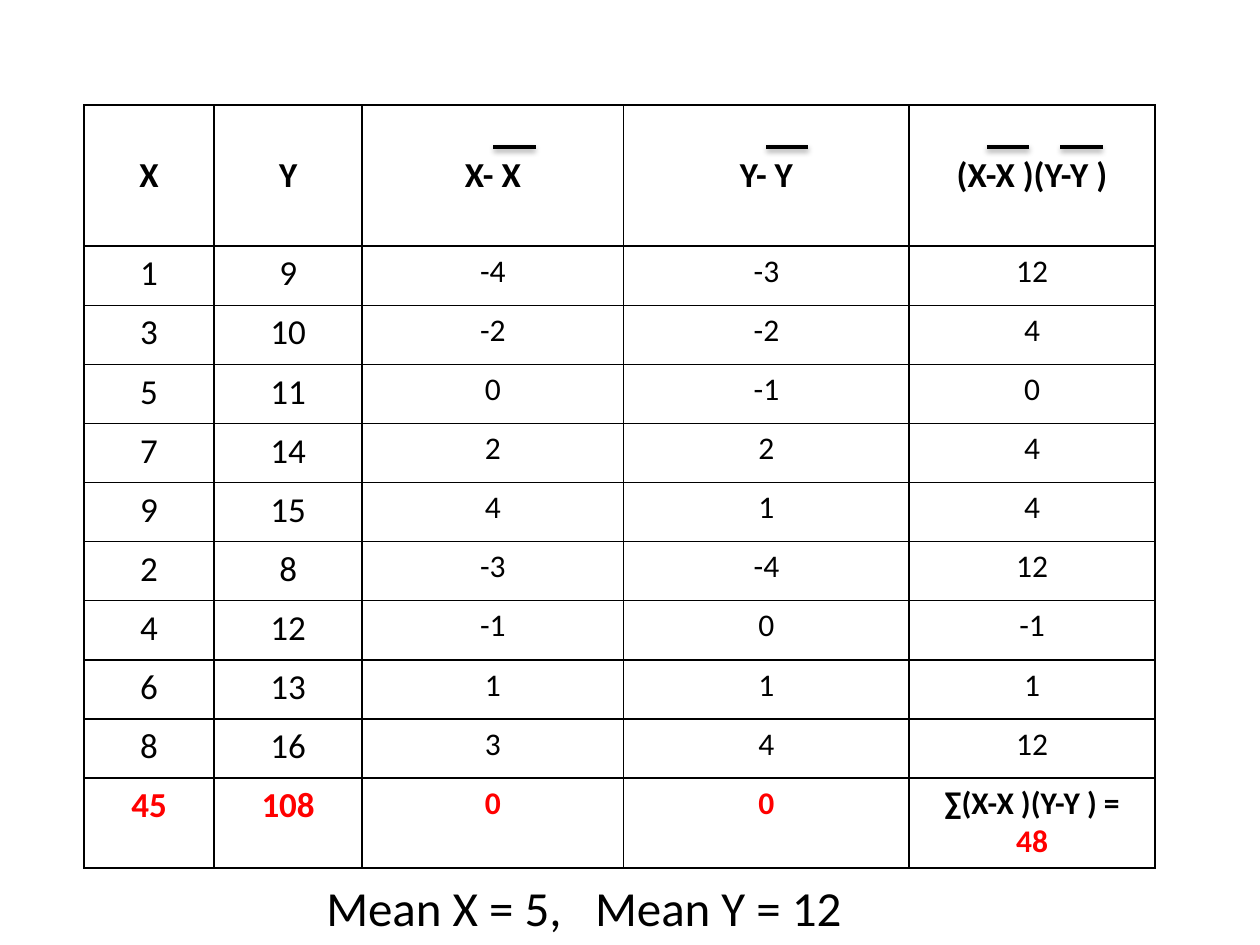
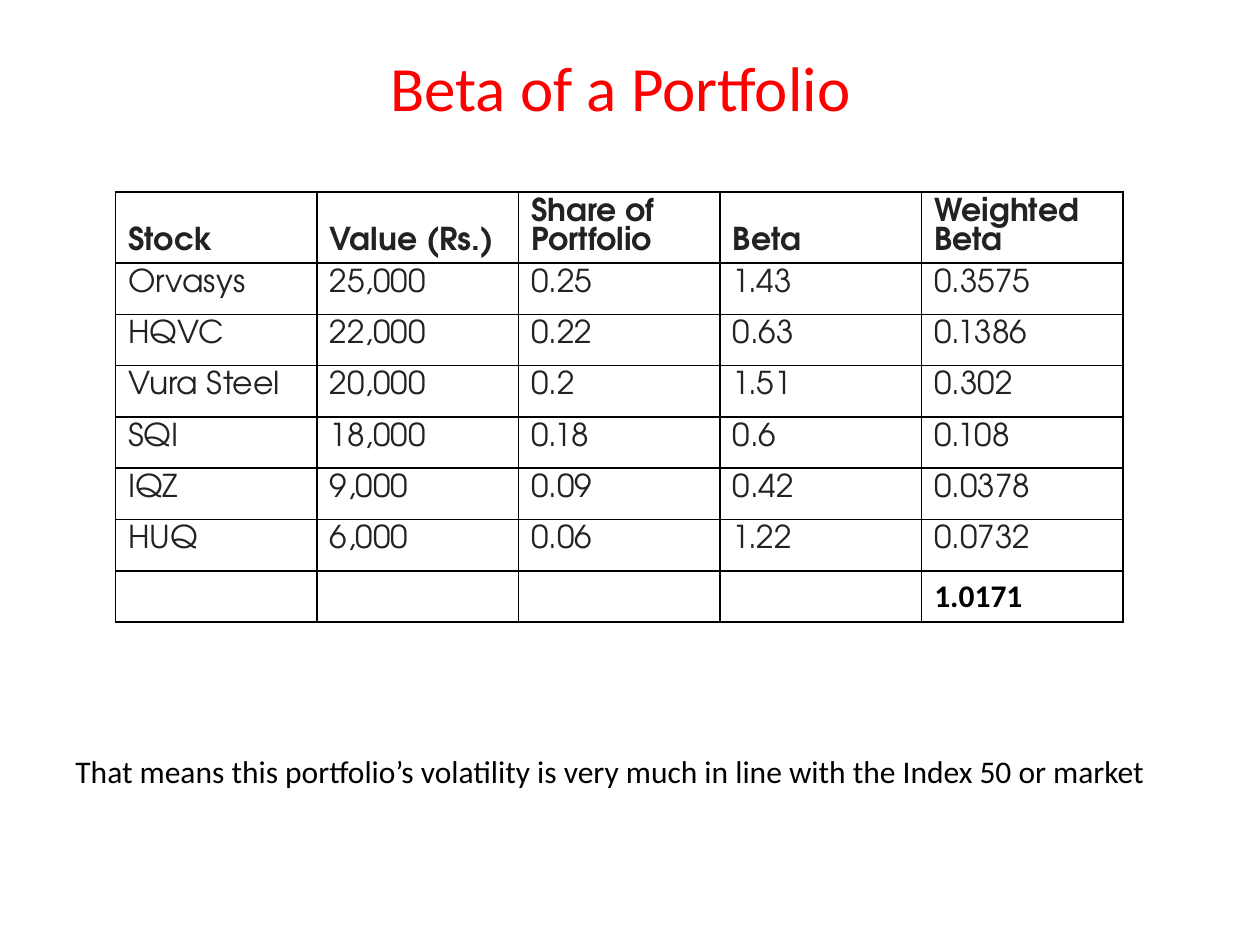
from dataclasses import dataclass

from lxml import etree
from pptx import Presentation, util as u
from pptx.dml.color import RGBColor
from pptx.enum import shapes, text
from pptx.oxml import parse_xml
from pptx.oxml.ns import nsdecls, qn


# Colours, fonts and type sizes
@dataclass(frozen=True)
class Theme:
    ink: str = "000000"
    red: str = "FF0000"
    grey: str = "222222"
    sans: str = "Calibri"
    geo: str = "TeX Gyre Adventor"
    title: int = 36
    lead: int = 28
    big: int = 20
    body: int = 18
    tight: float = 16.65


T = Theme()
MID, BASE, TOP = text.MSO_ANCHOR.MIDDLE, text.MSO_ANCHOR.BOTTOM, text.MSO_ANCHOR.TOP
LEFT, MIDDLE = text.PP_ALIGN.LEFT, text.PP_ALIGN.CENTER

DEVS = [
    ["X", "Y", "X- X", "Y- Y", "(X-X )(Y-Y )"],
    ["1", "9", "-4", "-3", "12"],
    ["3", "10", "-2", "-2", "4"],
    ["5", "11", "0", "-1", "0"],
    ["7", "14", "2", "2", "4"],
    ["9", "15", "4", "1", "4"],
    ["2", "8", "-3", "-4", "12"],
    ["4", "12", "-1", "0", "-1"],
    ["6", "13", "1", "1", "1"],
    ["8", "16", "3", "4", "12"],
    ["45", "108", "0", "0", "∑(X-X )(Y-Y ) =\n48"],
]
STOCKS = [
    ["Stock", "Value (Rs.)", "Share of Portfolio", "Beta", "Weighted Beta"],
    ["Orvasys", "25,000", "0.25", "1.43", "0.3575"],
    ["HQVC", "22,000", "0.22", "0.63", "0.1386"],
    ["Vura Steel", "20,000", "0.2", "1.51", "0.302"],
    ["SQI", "18,000", "0.18", "0.6", "0.108"],
    ["IQZ", "9,000", "0.09", "0.42", "0.0378"],
    ["HUQ", "6,000", "0.06", "1.22", "0.0732"],
    ["", "", "", "", "1.0171"],
]


def grid(n):
    """Length of n grid units; the slide is 120 by 90 units."""
    return u.Inches(n / 12)


def style(para, size, color=T.ink, font=T.sans, bold=False, align=LEFT):
    para.alignment = align
    for run in para.runs:
        run.font.size = u.Pt(size)
        run.font.name = font
        run.font.bold = bold
        run.font.color.rgb = RGBColor.from_string(color)


def label(slide, words, x, y, w, h, size, color=T.ink, tab=None):
    box = slide.shapes.add_textbox(grid(x), grid(y), grid(w), grid(h))
    box.text_frame.word_wrap = True
    para = box.text_frame.paragraphs[0]
    para.text = words
    if tab:
        stops = etree.SubElement(para._p.get_or_add_pPr(), qn("a:tabLst"))
        etree.SubElement(stops, qn("a:tab"), pos=str(grid(tab)), algn="l")
    style(para, size, color)


def border(cell):
    props = cell._tc.get_or_add_tcPr()
    for side in "LRTB":
        props.append(parse_xml(
            f'<a:ln{side} {nsdecls("a")} w="12700"><a:solidFill>'
            f'<a:srgbClr val="{T.ink}"/></a:solidFill></a:ln{side}>'))
    cell.fill.background()


def table(slide, data, x, y, cols, rows, look):
    """Draw a ruled table; look(cell, row, col) styles each cell."""
    frame = slide.shapes.add_table(len(rows), len(cols), grid(x), grid(y),
                                   grid(sum(cols)), grid(sum(rows)))
    tab = frame.table
    tab.first_row = tab.horz_banding = False
    for col, w in zip(tab.columns, cols):
        col.width = grid(w)
    for row, h in zip(tab.rows, rows):
        row.height = grid(h)
    for r, line in enumerate(data):
        for c, words in enumerate(line):
            cell = tab.cell(r, c)
            border(cell)
            cell.text_frame.text = words
            look(cell, r, c)


def bar(slide, x, y, w):
    """Mean sign: a short rule with a soft shadow."""
    rule = slide.shapes.add_connector(shapes.MSO_CONNECTOR.STRAIGHT,
                                      grid(x), grid(y), grid(x + w), grid(y))
    rule.line.width = u.Pt(2)
    rule.line.color.rgb = RGBColor.from_string(T.ink)
    rule._element.spPr.append(parse_xml(
        f'<a:effectLst {nsdecls("a")}><a:outerShdw blurRad="40000" dist="20000" '
        f'dir="5400000" rotWithShape="0"><a:srgbClr val="{T.ink}">'
        '<a:alpha val="38000"/></a:srgbClr></a:outerShdw></a:effectLst>'))


def devlook(cell, r, c):
    head, total = r == 0, r == len(DEVS) - 1
    cell.vertical_anchor = MID if head else TOP
    size = T.big if head or c < 2 else T.body
    for para in cell.text_frame.paragraphs:
        red = total and not para.text.startswith("∑")
        style(para, size, T.red if red else T.ink, bold=head or total, align=MIDDLE)


def stocklook(cell, r, c):
    para = cell.text_frame.paragraphs[0]
    if r == len(STOCKS) - 1:
        style(para, T.body, bold=True)
        return
    cell.vertical_anchor = BASE if r == 0 else TOP
    para.line_spacing = u.Pt(T.tight)
    style(para, T.body, T.grey, T.geo, bold=r == 0)


def devs(slide):
    table(slide, DEVS, 8, 10, [12.4, 14.1, 24.9, 27.2, 23.4],
          [13.45] + [5.63] * 9 + [8.57], devlook)
    for x in (47, 73, 94, 101):
        bar(slide, x, 14, 4)
    label(slide, "Mean X = 5,\tMean Y = 12", 29.9, 83, 52.1, 6.9, T.lead, tab=25.6)


def beta(slide):
    table(slide, STOCKS, 11, 18.3, [19.2] * 5, [6.75] + [34.2 / 7] * 7, stocklook)
    label(slide, "Beta of a Portfolio", 36, 4, 46.8, 8.5, T.title, T.red)
    label(slide, "That means this portfolio’s volatility is very much in line "
          "with the Index 50 or market", 6, 71, 104.8, 4.8, T.body)


def main():
    deck = Presentation()
    deck.slide_width, deck.slide_height = grid(120), grid(90)
    for draw in (devs, beta):
        draw(deck.slides.add_slide(deck.slide_layouts[6]))
    deck.save("out.pptx")


if __name__ == "__main__":
    main()
